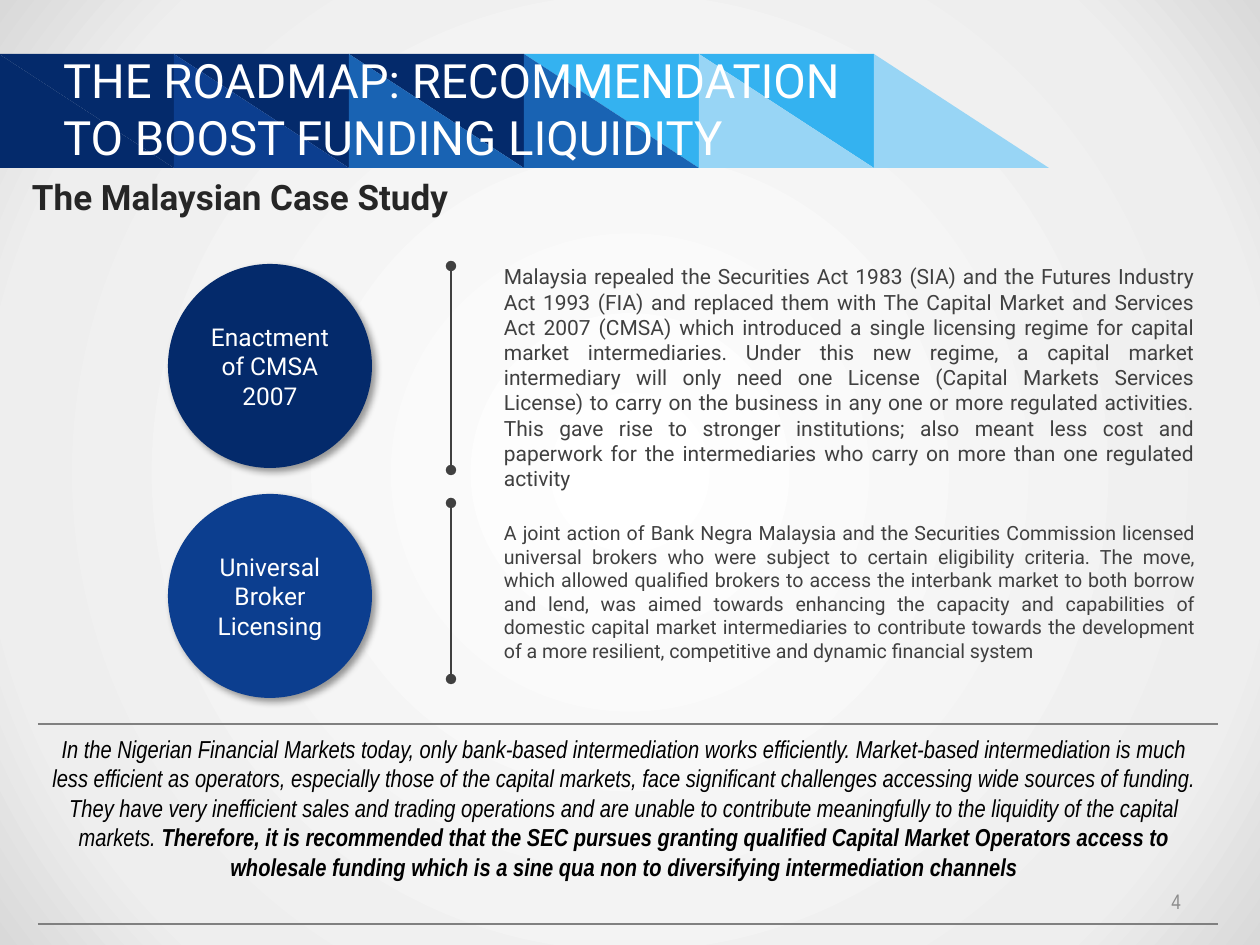
from lxml import etree
from pptx import Presentation
from pptx.dml.color import RGBColor
from pptx.enum.shapes import MSO_CONNECTOR, MSO_SHAPE
from pptx.enum.text import MSO_ANCHOR, MSO_AUTO_SIZE, PP_ALIGN
from pptx.oxml.ns import qn
from pptx.util import Pt

LEFT, MID, RIGHT, JUST = PP_ALIGN.LEFT, PP_ALIGN.CENTER, PP_ALIGN.RIGHT, PP_ALIGN.JUSTIFY
TOP, CENTER = MSO_ANCHOR.TOP, MSO_ANCHOR.MIDDLE
FIXED = MSO_AUTO_SIZE.NONE
LINE, OVAL = MSO_CONNECTOR.STRAIGHT, MSO_SHAPE.OVAL
SCALE = 914400 / 126
NAVY, BLUE, ROYAL, SKY, PALE = "042A6B", "0C3E8F", "1963B3", "34B2F0", "98D5F5"
WHITE, BLACK, DARK, GREY = "FFFFFF", "000000", "404040", "808080"
ROBOTO, NARROW = "Roboto", "Arial Narrow"

BAND = [(NAVY, NAVY), (NAVY, BLUE), (NAVY, ROYAL), (SKY, ROYAL), (SKY, PALE), (None, PALE)]
ACT = (
    "Malaysia repealed the Securities Act 1983 (SIA) and the Futures Industry Act 1993 (FIA) "
    "and replaced them with The Capital Market and Services Act 2007 (CMSA) which introduced "
    "a single licensing regime for capital market intermediaries. Under this new regime, a "
    "capital market intermediary will only need one License (Capital Markets Services License) "
    "to carry on the business in any one or more regulated activities. This gave rise to "
    "stronger institutions; also meant less cost and paperwork for the intermediaries who "
    "carry on more than one regulated activity"
)
BROKER = (
    "A joint action of Bank Negra Malaysia and the Securities Commission licensed universal "
    "brokers who were subject to certain eligibility criteria. The move, which allowed "
    "qualified brokers to access the interbank market to both borrow and lend, was aimed "
    "towards enhancing the capacity and capabilities of domestic capital market intermediaries "
    "to contribute towards the development of a more resilient, competitive and dynamic "
    "financial system"
)
STATE = (
    "In the Nigerian Financial Markets today, only bank-based intermediation works efficiently. "
    "Market-based intermediation is much less efficient as operators, especially those of the "
    "capital markets, face significant challenges accessing wide sources of funding. They have "
    "very inefficient sales and trading operations and are unable to contribute meaningfully "
    "to the liquidity of the capital markets. "
)
ADVICE = (
    "Therefore, it is recommended that the SEC pursues granting qualified Capital Market "
    "Operators access to wholesale funding which is a sine qua non to diversifying "
    "intermediation channels"
)
POINTS = [
    ("Enactment of CMSA 2007", NAVY, 264, (266, 470), ACT, (258, 217), 12),
    ("Universal Broker Licensing", BLUE, 494, (503, 679), BROKER, (515, 156), 11.2),
]


def px(num):
    """Turn pixels into EMU."""
    return round(num * SCALE)


def rgb(code):
    """Turn a hex string into a colour."""
    return RGBColor.from_string(code)


def add_node(root, tag, **attrs):
    """Append a drawing element with its attributes."""
    node = etree.SubElement(root, qn(tag))
    for key, val in attrs.items():
        node.set(key, str(val))
    return node


def paint(shape, color):
    """Give a shape a plain fill with no line or shadow."""
    shape.shadow.inherit = False
    shape.fill.solid()
    shape.fill.fore_color.rgb = rgb(color)
    shape.line.fill.background()


def write(shape, *parts, size, color, font=ROBOTO, align=LEFT, anchor=TOP,
          bold=False, italic=False, gap=0, inset=(13, 6)):
    """Write runs in one paragraph, with only the last run bold if asked."""
    frame = shape.text_frame
    frame.word_wrap = True
    frame.auto_size = FIXED
    frame.vertical_anchor = anchor
    frame.margin_left = frame.margin_right = px(inset[0])
    frame.margin_top = frame.margin_bottom = px(inset[1])
    para = frame.paragraphs[0]
    para.alignment = align
    para.space_before = para.space_after = Pt(gap)
    for part in parts:
        run = para.add_run()
        run.text = part
        run.font.name = font
        run.font.size = Pt(size)
        run.font.color.rgb = rgb(color)
        run.font.bold = bold and part == parts[-1]
        run.font.italic = italic


def add_text(slide, box, *parts, **style):
    """Add a text box with formatted text."""
    shape = slide.shapes.add_textbox(*map(px, box))
    write(shape, *parts, **style)


def add_line(slide, start, end, color, width, dots=False):
    """Add a line, with round ends if asked."""
    line = slide.shapes.add_connector(LINE, *map(px, start + end))
    line.line.color.rgb = rgb(color)
    line.line.width = Pt(width)
    props = line.element.spPr
    if dots:
        for tag in ("a:headEnd", "a:tailEnd"):
            add_node(props.find(qn("a:ln")), tag, type="oval")
    add_node(props, "a:effectLst")


def add_disc(slide, top, text, color):
    """Add a labelled circle with a soft shadow."""
    disc = slide.shapes.add_shape(OVAL, *map(px, (168, top, 204, 204)))
    paint(disc, color)
    effects = disc.element.spPr.find(qn("a:effectLst"))
    shade = add_node(effects, "a:outerShdw", blurRad=Pt(4), dist=Pt(3),
                     dir=45 * 60000, algn="tl", rotWithShape=0)
    add_node(add_node(shade, "a:srgbClr", val=BLACK), "a:alpha", val=40000)
    write(disc, text, size=14, color=WHITE, align=MID, anchor=CENTER)


def add_band(slide):
    """Add the row of split tiles behind the title."""
    left, top, low, step = -1, 54, 168, 175
    for col, pair in enumerate(BAND):
        near = left + col * step
        far = near + step
        for color, apex in zip(pair, ((far, top), (near, low))):
            if color:
                build = slide.shapes.build_freeform(near, top, scale=SCALE)
                build.add_line_segments([(far, low), apex])
                paint(build.convert_to_shape(), color)


def set_back(slide):
    """Fill the background with a round gradient."""
    slide.background.fill.gradient()
    grad = next(slide.element.iter(qn("a:gradFill")))
    for child in list(grad):
        grad.remove(child)
    stops = add_node(grad, "a:gsLst")
    for pos, color in ((0, WHITE), (81, "EEEEEE"), (100, "D9D9D9")):
        add_node(add_node(stops, "a:gs", pos=pos * 1000), "a:srgbClr", val=color)
    sides = dict.fromkeys("ltrb", 50000)
    add_node(add_node(grad, "a:path", path="circle"), "a:fillToRect", **sides)


def add_title(slide):
    """Place the title above the band."""
    title = slide.shapes.title
    title.left, title.top, title.width, title.height = map(px, (63, 59, 809, 98))
    write(title, "THE ROADMAP: RECOMMENDATION TO BOOST FUNDING LIQUIDITY",
          size=27, color=WHITE, anchor=CENTER, inset=(0, 9))
    tree = title.element.getparent()
    tree.append(title.element)


def main():
    """Build and save the slide."""
    deck = Presentation()
    deck.slide_width, deck.slide_height = px(1260), px(945)
    slide = deck.slides.add_slide(deck.slide_layouts[5])
    set_back(slide)
    add_band(slide)
    add_title(slide)
    add_text(slide, (19, 169, 596, 55), "The Malaysian Case Study",
             size=20, color="262626", bold=True)
    for label, color, top, span, body, (start, tall), size in POINTS:
        add_disc(slide, top, label, color)
        add_line(slide, (451, span[0]), (451, span[1]), DARK, 0.75, dots=True)
        add_text(slide, (491, start, 717, tall), body, size=size, color=DARK, align=JUST)
    for level in (724, 924):
        add_line(slide, (38, level), (1218, level), GREY, 1)
    add_text(slide, (34, 728, 1181, 171), STATE, ADVICE, size=14, color=BLACK,
             font=NARROW, align=MID, bold=True, italic=True, gap=8.8)
    add_text(slide, (903, 876, 294, 50), "4", size=12, color="8C8C8C",
             font=NARROW, align=RIGHT, anchor=CENTER, inset=(16, 9))
    deck.save("out.pptx")


if __name__ == "__main__":
    main()
